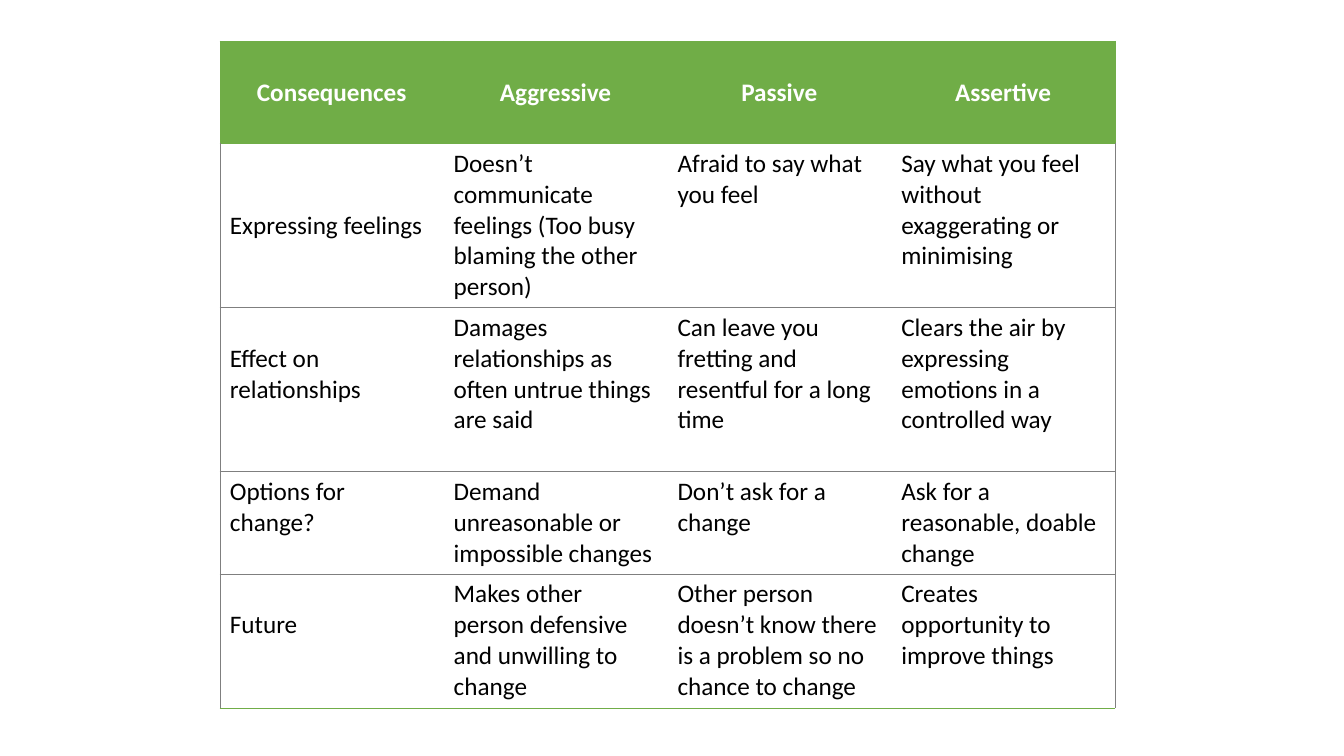
from lxml.etree import SubElement
from pptx import Presentation
from pptx.dml.color import RGBColor
from pptx.enum.text import MSO_ANCHOR as Anchor, PP_ALIGN as Align
from pptx.oxml.ns import qn
from pptx.util import Cm, Pt

GREEN, GREY, WHITE, BLACK = "70AD47", "7F7F7F", "FFFFFF", "000000"
NO_STYLE = "{2D5ABB26-0587-4C30-8999-92F81FD0307C}"
LEFT, TOP, COLUMN_WIDTH = 5.54, 1.04, 5.64
LINE_HEIGHT = 0.775
CELL_MARGIN = 0.13

HEADINGS = ["Consequences", "Aggressive", "Passive", "Assertive"]
HEADING_HEIGHT = 2.58
# Row height, lines the row label is lowered by, cell texts
ROWS = [
    (4.13, 2, ["Expressing feelings",
               "Doesn’t communicate feelings (Too busy blaming the other person)",
               "Afraid to say what you feel",
               "Say what you feel without exaggerating or minimising"]),
    (4.13, 1, ["Effect on relationships",
               "Damages relationships as often untrue things are said",
               "Can leave you fretting and resentful for a long time",
               "Clears the air by expressing emotions in a controlled way"]),
    (2.58, 0, ["Options for change?",
               "Demand unreasonable or impossible changes",
               "Don’t ask for a change",
               "Ask for a reasonable, doable change"]),
    (3.38, 1, ["Future",
               "Makes other person defensive and unwilling to change",
               "Other person doesn’t know there is a problem so no chance to change",
               "Creates opportunity to improve things"]),
]


def rgb(color):
    return RGBColor.from_string(color)


def set_borders(cell, borders):
    """Draw thin lines on the sides given as {side: colour}, before any fill is set."""
    properties = cell._tc.get_or_add_tcPr()
    for side in "LRTB":
        if side in borders:
            line = SubElement(properties, qn(f"a:ln{side}"), w=str(Pt(0.5)))
            fill = SubElement(line, qn("a:solidFill"))
            SubElement(fill, qn("a:srgbClr"), val=borders[side])


def fill_cell(cell, text, fill, color, bold=False):
    cell.fill.solid()
    cell.fill.fore_color.rgb = rgb(fill)
    para = cell.text_frame.paragraphs[0]
    para.text = text
    para.alignment = Align.CENTER if bold else Align.LEFT
    font = para.runs[0].font
    font.name, font.size, font.bold = "Calibri", Pt(18), bold
    font.color.rgb = rgb(color)


def body_borders(row, column):
    borders = {"T": GREEN if row == 1 else GREY,
               "B": GREEN if row == len(ROWS) else GREY}
    if column == 0:
        borders["L"] = GREY
    if column == len(HEADINGS) - 1:
        borders["R"] = GREY
    return borders


def add_plain_table(page, heights):
    frame = page.shapes.add_table(
        len(heights), len(HEADINGS), Cm(LEFT), Cm(TOP),
        Cm(COLUMN_WIDTH * len(HEADINGS)), Cm(sum(heights)))
    table = frame.table
    table.horz_banding = False
    table._tbl.tblPr.find(qn("a:tableStyleId")).text = NO_STYLE
    for column in table.columns:
        column.width = Cm(COLUMN_WIDTH)
    for row, height in zip(table.rows, heights):
        row.height = Cm(height)
    return table


def add_consequences_table(page):
    heights = [HEADING_HEIGHT] + [height for height, _, _ in ROWS]
    table = add_plain_table(page, heights)
    for column, heading in enumerate(HEADINGS):
        cell = table.cell(0, column)
        set_borders(cell, dict.fromkeys("LRTB", GREEN))
        fill_cell(cell, heading, GREEN, WHITE, bold=True)
        cell.vertical_anchor = Anchor.MIDDLE
    for row, (_, lowered_lines, texts) in enumerate(ROWS, start=1):
        for column, text in enumerate(texts):
            cell = table.cell(row, column)
            set_borders(cell, body_borders(row, column))
            fill_cell(cell, text, WHITE, BLACK)
        table.cell(row, 0).margin_top = Cm(CELL_MARGIN + lowered_lines * LINE_HEIGHT)


def main():
    deck = Presentation()
    deck.slide_width, deck.slide_height = Cm(33.87), Cm(19.05)
    page = deck.slides.add_slide(deck.slide_layouts[6])
    add_consequences_table(page)
    deck.save("out.pptx")


if __name__ == "__main__":
    main()
